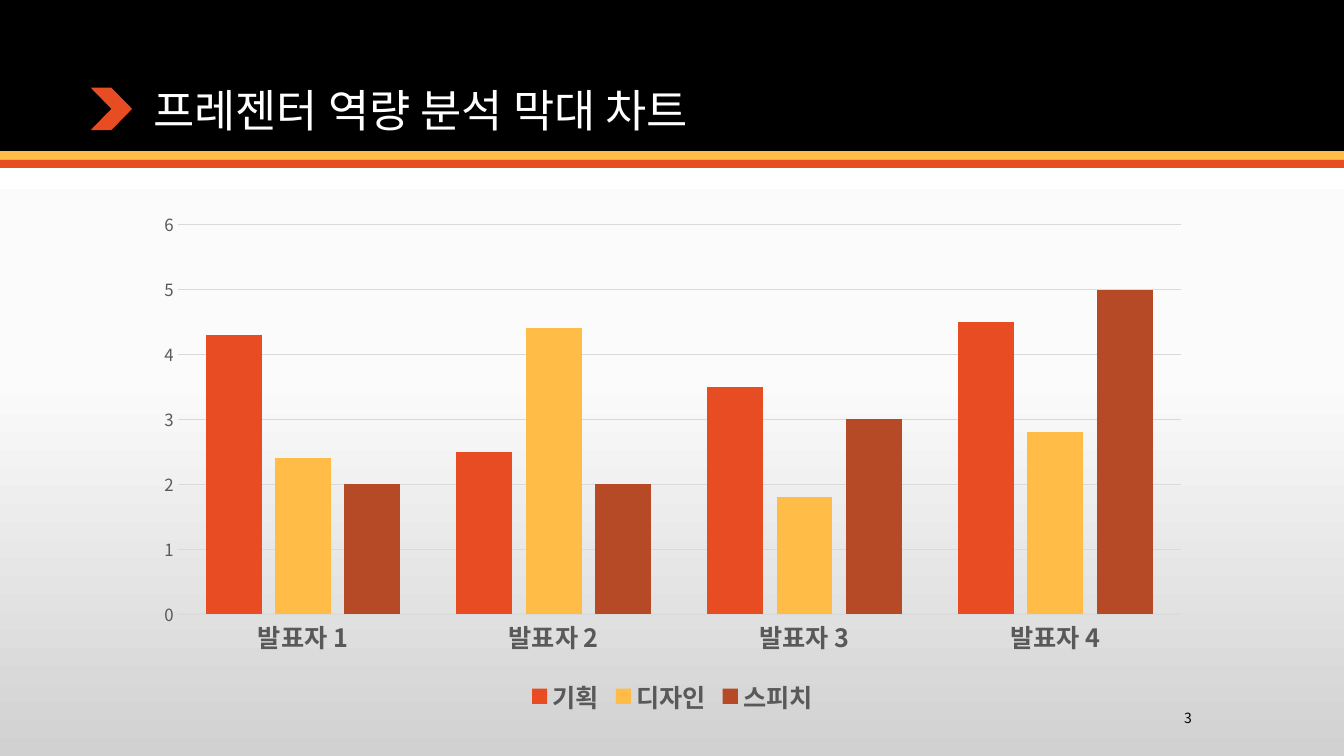
"""Builds a slide with a clustered column chart of presenter skills."""
import lxml.etree
import pptx
import pptx.chart.data
import pptx.dml.color
import pptx.enum.chart
import pptx.enum.shapes
import pptx.enum.text
import pptx.oxml.ns
import pptx.util

FONT = "Noto Sans CJK KR"
BLACK, WHITE, GREY, RULE = "000000", "FFFFFF", "595959", "D9D9D9"
ORANGE, YELLOW, RUST = "E84C22", "FFBD47", "B64926"
WIDTH, HEIGHT = pptx.util.Inches(13.33), pptx.util.Inches(7.5)
qn = pptx.oxml.ns.qn


def color(hex_value):
    return pptx.dml.color.RGBColor.from_string(hex_value)


def style(font, size, hex_value, bold=False):
    for key, value in {"size": pptx.util.Pt(size), "bold": bold, "name": FONT}.items():
        setattr(font, key, value)
    font.color.rgb = color(hex_value)
    latin = font._element.find(qn("a:latin")) if hasattr(font, "_element") else font._rPr.find(qn("a:latin"))
    east_asian = lxml.etree.Element(qn("a:ea"), typeface=FONT)
    latin.addnext(east_asian)


deck = pptx.Presentation()
deck.slide_width, deck.slide_height = WIDTH, HEIGHT
slide = deck.slides.add_slide(deck.slide_layouts[6])

backdrop = slide.background.fill
backdrop.gradient()
gradient = slide.background._cSld.find(".//" + qn("a:gradFill"))
stops = gradient.find(qn("a:gsLst"))
for stop in list(stops):
    stops.remove(stop)
for share, shade in ((0, WHITE), (50, "FBFBFB"), (100, "D1D1D1")):
    stop = lxml.etree.SubElement(stops, qn("a:gs"), pos=str(share * 1000))
    lxml.etree.SubElement(stop, qn("a:srgbClr"), val=shade)
gradient.find(qn("a:lin")).set("ang", str(90 * 60000))

header = HEIGHT * 0.2
stripe = HEIGHT / 90
shapes = pptx.enum.shapes.MSO_SHAPE
inch = pptx.util.Inches(1)
for kind, left, top, width, height, fill in (
    (shapes.RECTANGLE, 0, 0, WIDTH, header, BLACK),
    (shapes.RECTANGLE, 0, header, WIDTH, stripe, YELLOW),
    (shapes.RECTANGLE, 0, header + stripe, WIDTH, stripe, ORANGE),
    (shapes.CHEVRON, 0.9 * inch, 0.87 * inch, 0.41 * inch, 0.42 * inch, ORANGE),
):
    band = slide.shapes.add_shape(kind, *map(int, (left, top, width, height)))
    band.shadow.inherit = False
    band.fill.solid()
    band.fill.fore_color.rgb = color(fill)
    band.line.fill.background()

margin, content = 1.42, 10.5
anchors, aligns = pptx.enum.text.MSO_ANCHOR, pptx.enum.text.PP_ALIGN
for text, box, anchor, align, size, ink, spacing in (
    ("프레젠터 역량 분석 막대 차트", (margin, 0.28, content, 1.13),
     anchors.BOTTOM, aligns.LEFT, 32, WHITE, 0.9),
    ("3", (margin + content - 1.5, 6.97, 1.5, 0.3),
     anchors.MIDDLE, aligns.RIGHT, 10, BLACK, 1.0),
):
    frame = slide.shapes.add_textbox(*map(pptx.util.Inches, box)).text_frame
    frame.word_wrap = True
    frame.vertical_anchor = anchor
    line = frame.paragraphs[0]
    line.alignment, line.line_spacing = align, spacing
    run = line.add_run()
    run.text = text
    style(run.font, size, ink)

skills = (
    ("기획", (4.3, 2.5, 3.5, 4.5), ORANGE),
    ("디자인", (2.4, 4.4, 1.8, 2.8), YELLOW),
    ("스피치", (2, 2, 3, 5), RUST),
)
scores = pptx.chart.data.CategoryChartData()
scores.categories = [f"발표자 {number}" for number in range(1, 5)]
for skill, values, _ in skills:
    scores.add_series(skill, values)
chart = slide.shapes.add_chart(
    pptx.enum.chart.XL_CHART_TYPE.COLUMN_CLUSTERED,
    *map(pptx.util.Inches, (margin, 2, content, 5.14)), scores).chart
style(chart.font, 10, BLACK)
chart.has_title = False
chart.has_legend = True
chart.legend.position = pptx.enum.chart.XL_LEGEND_POSITION.BOTTOM
chart.legend.include_in_layout = False
style(chart.legend.font, 18, GREY, True)

columns = chart.plots[0]
for key, value in {"gap_width": 100, "overlap": -24, "vary_by_categories": False}.items():
    setattr(columns, key, value)
for series, (_, _, fill) in zip(columns.series, skills):
    series.format.fill.solid()
    series.format.fill.fore_color.rgb = color(fill)

presenters, scale = chart.category_axis, chart.value_axis
scale.minimum_scale, scale.maximum_scale, scale.major_unit = 0, 6, 1
scale.has_major_gridlines = True
scale.format.line.fill.background()
style(presenters.tick_labels.font, 18, GREY, True)
style(scale.tick_labels.font, 12, GREY)
for axis in (presenters, scale):
    axis.major_tick_mark = pptx.enum.chart.XL_TICK_MARK.NONE
    axis.minor_tick_mark = pptx.enum.chart.XL_TICK_MARK.NONE
for rule in (presenters.format.line, scale.major_gridlines.format.line):
    rule.color.rgb = color(RULE)
    rule.width = pptx.util.Pt(0.75)

deck.save("out.pptx")
